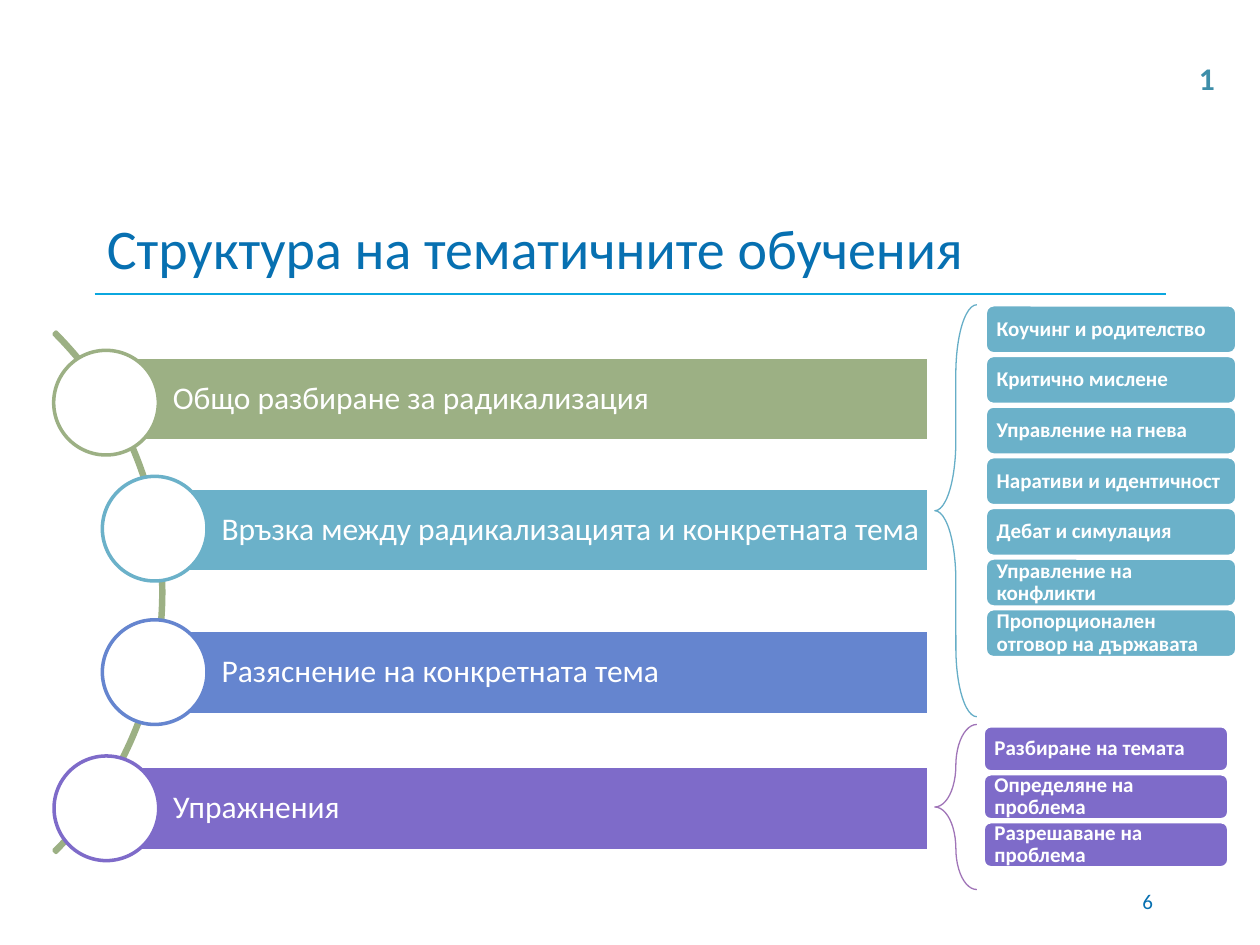
from lxml.etree import SubElement
from pptx import Presentation
from pptx.dml.color import RGBColor
from pptx.enum.shapes import MSO_CONNECTOR, MSO_SHAPE as Kind
from pptx.enum.text import MSO_ANCHOR as Anchor, PP_ALIGN as Align
from pptx.oxml.ns import qn
from pptx.util import Pt

FONT = "Calibri"
HUES = {
    "white": "FFFFFF", "title": "0770B1", "rule": "0BA7DF",
    "green": "9CB084", "teal": "6BB1C9", "blue": "6585CF", "violet": "7E6BC9",
    "brace": "66AEC7", "plum": "A075B8", "page": "3E8EA9",
}
RIGHT = 531  # shared right edge of the bars
DISC = 59.8

# text, colour, bar left, bar top, disc top
STEPS = [
    ("Общо разбиране за радикализация", "green", 60.6, 203.9, 200.2),
    ("Връзка между радикализацията и конкретната тема", "teal", 88.4, 278.8, 272.2),
    ("Разяснение на конкретната тема", "blue", 88.4, 360.2, 354.2),
    ("Упражнения", "violet", 60.8, 438, 432),
]
TOPICS = [
    "Коучинг и родителство", "Критично мислене", "Управление на гнева",
    "Наративи и идентичност", "Дебат и симулация", "Управление на конфликти",
    "Пропорционален отговор на държавата",
]
TASKS = ["Разбиране на темата", "Определяне на проблема", "Разрешаване на проблема"]


def hue(name):
    return RGBColor.from_string(HUES[name])


def write(shape, text, size=12, color="white", bold=False, align=Align.LEFT,
          inset=(7.2, 3.6, 7.2, 3.6), space=1, wrap=True, anchor=Anchor.MIDDLE):
    frame = shape.text_frame
    frame.word_wrap = wrap
    frame.vertical_anchor = anchor
    (frame.margin_left, frame.margin_top,
     frame.margin_right, frame.margin_bottom) = map(Pt, inset)
    para = frame.paragraphs[0]
    para.alignment = align
    para.line_spacing = space
    run = para.add_run()
    run.text = text
    font = run.font
    font.name, font.size, font.bold = FONT, Pt(size), bold
    font.color.rgb = hue(color)


def label(slide, box, text, **style):
    write(slide.shapes.add_textbox(*map(Pt, box)), text, **style)


def draw(slide, kind, box, fill, line, width=2, adjust=()):
    shape = slide.shapes.add_shape(kind, *map(Pt, box))
    shape.shadow.inherit = False
    if fill:
        shape.fill.solid()
        shape.fill.fore_color.rgb = hue(fill)
    else:
        shape.fill.background()
    shape.line.color.rgb = hue(line)
    shape.line.width = Pt(width)
    for i, value in enumerate(adjust):
        shape.adjustments[i] = value
    return shape


def rule(slide, left, right, top):
    line = slide.shapes.add_connector(
        MSO_CONNECTOR.STRAIGHT, Pt(left), Pt(top), Pt(right), Pt(top))
    line.line.color.rgb = hue("rule")
    line.line.width = Pt(0.75)
    SubElement(line._element.spPr, qn("a:effectLst"))


def step(slide, text, color, left, top, disc):
    """Draw a bar with a disc centred on its left edge."""
    bar = draw(slide, Kind.RECTANGLE, (left, top, RIGHT - left, 48), color, "white")
    write(bar, text, size=18, inset=(38.2, 3.6, 3.6, 3.6), space=0.9)
    draw(slide, Kind.OVAL, (left - DISC / 2, disc, DISC, DISC), "white", color)


def stack(slide, items, color, box, pitch):
    """Draw equal rounded boxes downwards from the first box."""
    left, top, width, height = box
    for i, text in enumerate(items):
        pill = draw(slide, Kind.ROUNDED_RECTANGLE,
                    (left, top + i * pitch, width, height), color, "white")
        write(pill, text, bold=True, inset=(5.2, 5, 5, 5), space=0.9)


def brace(slide, top, height, color):
    draw(slide, Kind.LEFT_BRACE, (534.2, top, 24, height), None, color,
         width=0.75, adjust=(1.65, 0.5))


def main():
    deck = Presentation()
    deck.slide_width, deck.slide_height = Pt(720), Pt(540)
    slide = deck.slides.add_slide(deck.slide_layouts[6])

    rule(slide, 54, 666, 168)
    label(slide, (54, 114, 612, 54), "Структура на тематичните обучения",
          size=32, color="title")
    label(slide, (516, 500.6, 150, 28.8), "6", color="title", align=Align.RIGHT)
    label(slide, (678, 30, 24, 29), "1", size=18, color="page", bold=True,
          wrap=False, anchor=Anchor.TOP)

    draw(slide, Kind.BLOCK_ARC, (-326.9, 128.2, 420.5, 420.5), "green", "green",
         adjust=(189, 27, 0.004))
    for item in STEPS:
        step(slide, *item)

    stack(slide, TOPICS, "teal", (563, 174.2, 143.8, 28), 28.94)
    brace(slide, 174.2, 235.4, "brace")
    stack(slide, TASKS, "violet", (561.8, 414.7, 140.4, 26.4), 27.4)
    brace(slide, 414, 94.3, "plum")

    deck.save("out.pptx")


if __name__ == "__main__":
    main()
